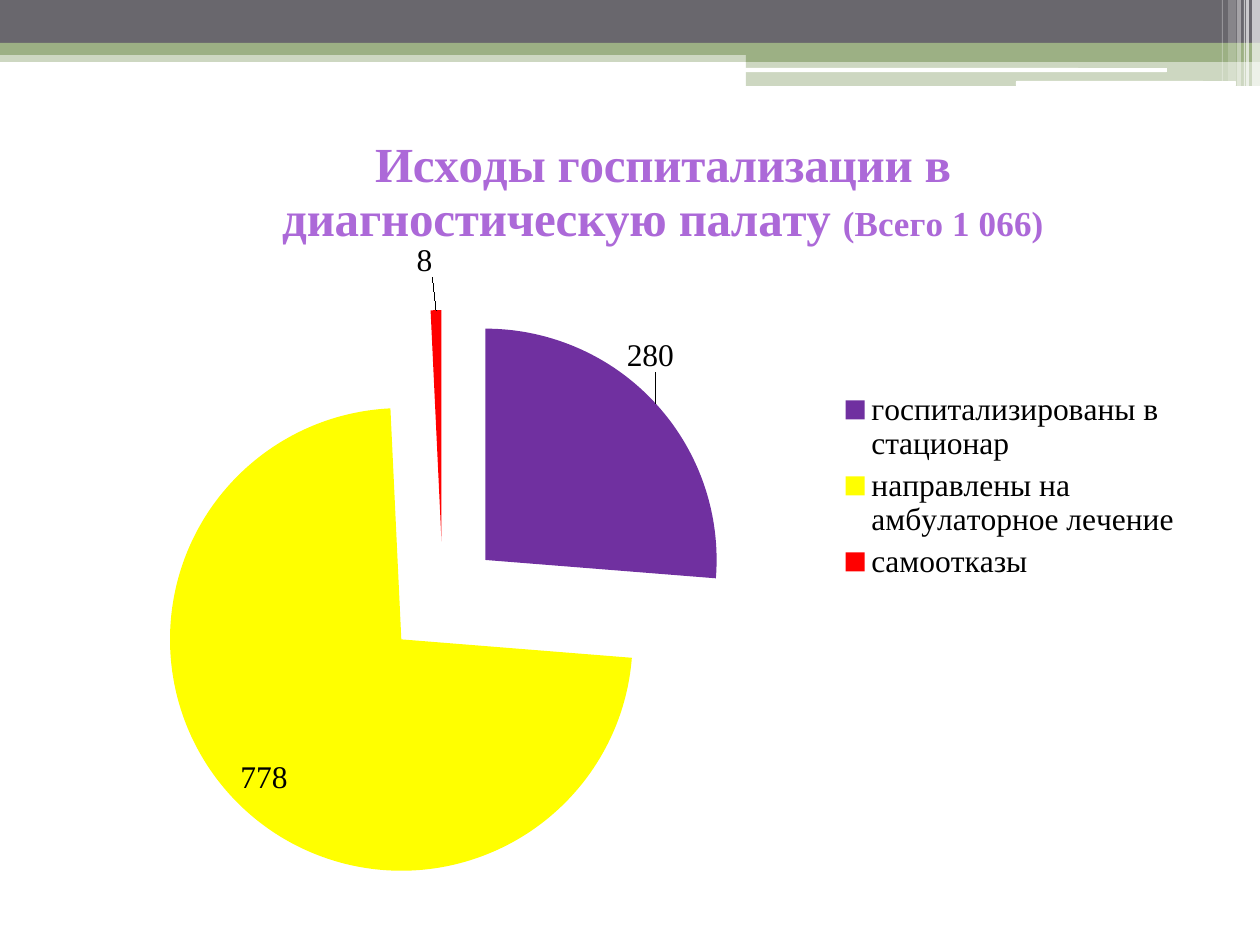
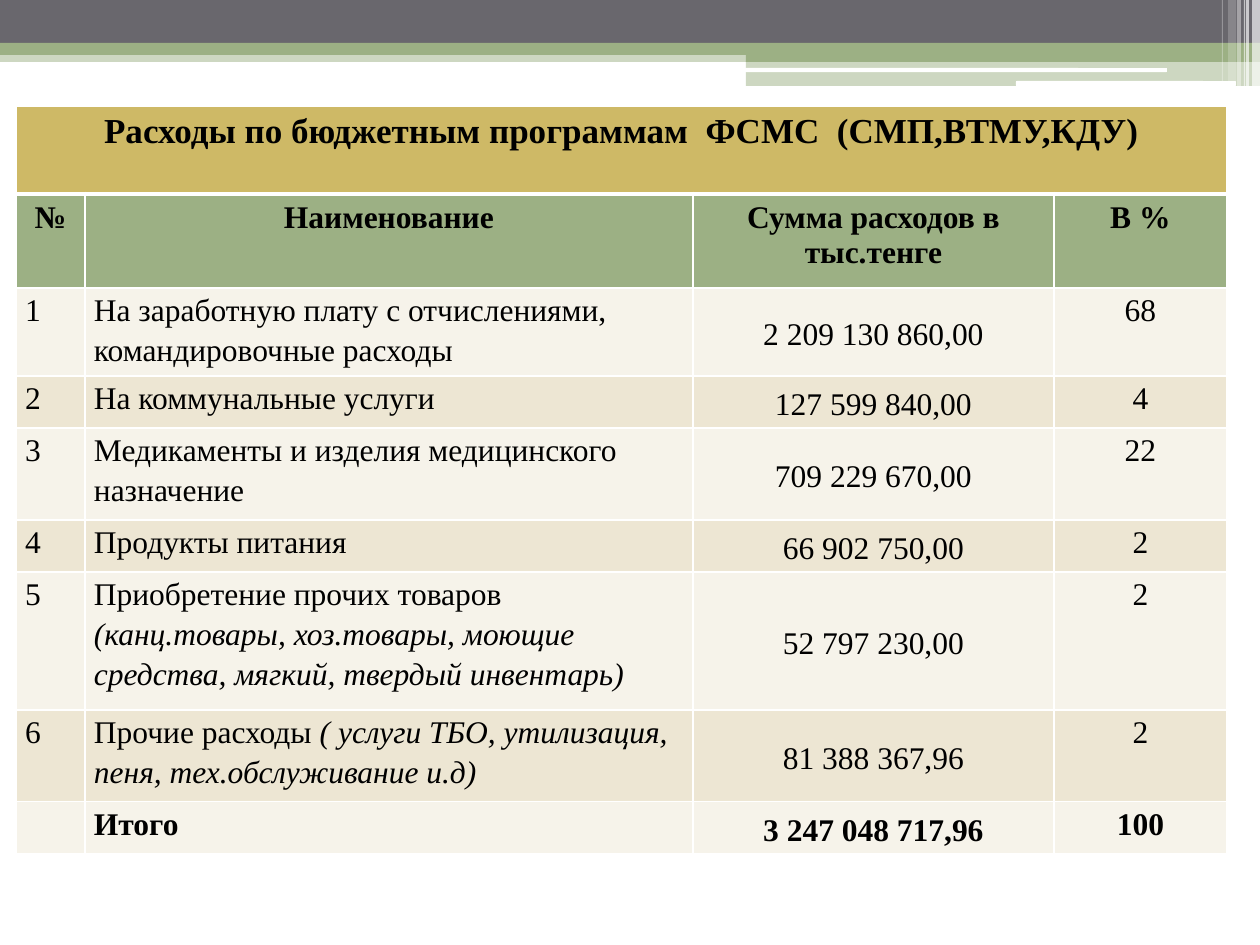
import pptx
import pptx.chart.data
import pptx.dml.color
import pptx.enum.chart
import pptx.enum.shapes
import pptx.enum.text
import pptx.oxml
import pptx.oxml.ns
import pptx.util

RGB = pptx.dml.color.RGBColor
Pt = pptx.util.Pt
SHAPE = pptx.enum.shapes.MSO_SHAPE
ALIGN = pptx.enum.text.PP_ALIGN
ANCHOR = pptx.enum.text.MSO_ANCHOR
LABEL = pptx.enum.chart.XL_LABEL_POSITION
qn = pptx.oxml.ns.qn

WHITE = RGB(0xFF, 0xFF, 0xFF)
BLACK = RGB(0, 0, 0)
GREY = RGB(0x69, 0x67, 0x6D)
GREEN = RGB(0x9C, 0xB0, 0x84)
GOLD = RGB(0xCE, 0xB9, 0x66)
CREAM = RGB(0xF6, 0xF3, 0xEA)
SAND = RGB(0xED, 0xE6, 0xD3)
LILAC = RGB(0xAC, 0x69, 0xD8)
PURPLE = RGB(0x70, 0x30, 0xA0)
YELLOW = RGB(0xFF, 0xFF, 0)
RED = RGB(0xFF, 0, 0)

FONT = "Times New Roman"
SCALE = 914400 / 126

# left, top, width, height, colour, opacity in percent
BANDS = [
    (0, 50, 1260, 12, GREEN, 50),
    (0, 0, 1260, 43, GREY, 100),
    (0, 43, 1260, 12, GREEN, 100),
    (746, 49, 514, 13, GREEN, 100),
    (746, 61, 514, 25, GREEN, 50),
]
WHITE_BARS = [(745, 68, 422, 4), (1016, 81, 220, 5)]
# left, width, height, opacity in percent
STRIPES = [(1252, 8, 86, 65), (1246, 3, 86, 65), (1244, 1, 86, 60),
           (1237, 4, 86, 40), (1228, 8, 81, 20), (1222, 1, 81, 30)]

OUTCOMES = [
    ("госпитализированы в стационар", 280, PURPLE),
    ("направлены на амбулаторное лечение", 778, YELLOW),
    ("самоотказы", 8, RED),
]

COLUMNS = [69, 608, 361, 173]
ROWS = [88, 94, 88, 52, 92, 52, 138, 92, 52]
BUDGET_TITLE = "Расходы по бюджетным программам  ФСМС  (СМП,ВТМУ,КДУ)"
BUDGET_HEADER = ["№", "Наименование", "Сумма расходов в тыс.тенге", "В %"]
# number, name, note in italics, amount, share
EXPENSES = [
    ("1", "На заработную плату с отчислениями, командировочные расходы", "",
     "2 209 130 860,00", "68"),
    ("2", "На коммунальные услуги", "", "127 599 840,00", "4"),
    ("3", "Медикаменты и изделия медицинского назначение", "",
     "709 229 670,00", "22"),
    ("4", "Продукты питания", "", "66 902 750,00", "2"),
    ("5", "Приобретение прочих товаров\n",
     "(канц.товары, хоз.товары, моющие средства, мягкий, твердый инвентарь)",
     "52 797 230,00", "2"),
    ("6", "Прочие расходы ",
     "( услуги ТБО, утилизация, пеня, тех.обслуживание и.д)",
     "81 388 367,96", "2"),
    ("", "Итого", "", "3 247 048 717,96", "100"),
]


def px(n):
    return round(n * SCALE)


def format_font(font, size=18, bold=False, italic=False, color=BLACK):
    font.name, font.size = FONT, Pt(size)
    font.bold, font.italic = bold, italic
    font.color.rgb = color


def write(p, text, align=None, spacing=None, **style):
    """Add text to a paragraph; a final newline becomes a line break."""
    if align is not None:
        p.alignment = align
    if spacing:
        p.line_spacing = spacing
    r = p.add_run()
    r.text = text.rstrip("\n")
    format_font(r.font, **style)
    if text.endswith("\n"):
        p.add_line_break()


def chart_layout(target=None, mode="edge", **fractions):
    """Build a manual c:layout from x, y, w and h as shares of the chart."""
    layout = pptx.oxml.parse_xml(
        '<c:layout xmlns:c="http://schemas.openxmlformats.org/drawingml/2006/chart">'
        "<c:manualLayout/></c:layout>")
    items = [("layoutTarget", target)] if target else []
    if mode == "edge":
        items += [("xMode", "edge"), ("yMode", "edge")]
    items += fractions.items()
    for tag, val in items:
        layout[0].append(layout.makeelement(qn("c:" + tag), {"val": str(val)}))
    return layout


def set_layout(parent, layout, after=None):
    """Replace the layout of a chart part, placing it after a child if given."""
    for old in parent.findall(qn("c:layout")):
        parent.remove(old)
    if after is None:
        parent.insert(0, layout)
    else:
        parent.find(qn(after)).addnext(layout)


class Deck:
    def __init__(self):
        self.prs = pptx.Presentation()
        self.prs.slide_width, self.prs.slide_height = px(1260), px(945)
        self.s = None

    def new_slide(self):
        self.s = self.prs.slides.add_slide(self.prs.slide_layouts[6])

    def box(self, x, y, w, h, color, opacity=100, kind=SHAPE.RECTANGLE):
        sp = self.s.shapes.add_shape(kind, px(x), px(y), px(w), px(h))
        sp.shadow.inherit = False
        sp.fill.solid()
        sp.fill.fore_color.rgb = color
        sp.line.fill.background()
        if opacity < 100:
            clr = sp.element.spPr.find(".//" + qn("a:srgbClr"))
            clr.append(clr.makeelement(qn("a:alpha"), {"val": str(opacity * 1000)}))
        return sp

    def master_bands(self):
        """Draw the top bands, then move them to the master for all slides."""
        shapes = [self.box(*band) for band in BANDS]
        shapes += [self.box(*bar, WHITE, kind=SHAPE.ROUNDED_RECTANGLE)
                   for bar in WHITE_BARS]
        shapes += [self.box(x, 0, w, h, WHITE, opacity)
                   for x, w, h, opacity in STRIPES]
        tree = self.prs.slide_master.shapes.element
        for i, sp in enumerate(shapes, start=100):
            sp.element.nvSpPr.cNvPr.set("id", str(i))
            tree.append(sp.element)

    def pie(self, x, y, w, h, entries, title_runs):
        data = pptx.chart.data.CategoryChartData()
        data.categories = [name for name, _, _ in entries]
        data.add_series("Series 1", [value for _, value, _ in entries])
        chart = self.s.shapes.add_chart(
            pptx.enum.chart.XL_CHART_TYPE.PIE,
            px(x), px(y), px(w), px(h), data).chart
        format_font(chart.font)

        chart.has_title = True
        p = chart.chart_title.text_frame.paragraphs[0]
        for text, size in title_runs:
            write(p, text, align=ALIGN.CENTER, size=size, bold=True, color=LILAC)
        title = chart.chart_title._element
        set_layout(title, chart_layout(x=0.19, y=0.08), after="c:tx")

        chart.has_legend = True
        legend = chart.legend
        legend.position = pptx.enum.chart.XL_LEGEND_POSITION.RIGHT
        legend.include_in_layout = False
        format_font(legend.font)
        set_layout(legend._element, chart_layout(x=0.68, y=0.38, w=0.31, h=0.24),
                   after="c:legendPos")

        plot_area = chart.plots[0]._element.getparent()
        set_layout(plot_area, chart_layout("inner", x=0.08, y=0.29, w=0.51, h=0.69))

        series = chart.plots[0].series[0]
        for i, (_, _, color) in enumerate(entries):
            fill = series.points[i].format.fill
            fill.solid()
            fill.fore_color.rgb = color
        ser = series._element
        ser.find(qn("c:dPt")).addprevious(
            ser.makeelement(qn("c:explosion"), {"val": "25"}))

        labels = series.data_labels
        labels.show_value = True
        labels.position = LABEL.INSIDE_END
        format_font(labels.font)
        return series

    def move_label(self, series, index, dx, dy):
        """Put one label outside its slice, shifted by shares of the chart."""
        label = series.points[index].data_label
        format_font(label.font)
        label.position = LABEL.OUTSIDE_END
        for d_lbl in series._element.iter(qn("c:dLbl")):
            if d_lbl.find(qn("c:idx")).get("val") == str(index):
                set_layout(d_lbl, chart_layout(mode="factor", x=dx, y=dy),
                           after="c:idx")

    def table(self, x, y, columns, rows):
        frame = self.s.shapes.add_table(len(rows), len(columns), px(x), px(y),
                                        px(sum(columns)), px(sum(rows)))
        table = frame.table
        table.first_row = table.horz_banding = False
        for col, width in zip(table.columns, columns):
            col.width = px(width)
        for row, height in zip(table.rows, rows):
            row.height = px(height)
        return table

    def cell(self, cell, runs, fill, bottom=1, top=1, anchor=ANCHOR.TOP,
             margins=None, **style):
        """Fill, border and write a cell; runs are (text, italic) pairs."""
        tc_pr = cell._tc.get_or_add_tcPr()
        widths = {"lnL": 1, "lnR": 1, "lnT": top, "lnB": bottom}
        for i, (tag, width) in enumerate(widths.items()):
            tc_pr.insert(i, pptx.oxml.parse_xml(
                f'<a:{tag} xmlns:a="http://schemas.openxmlformats.org/drawingml/2006/main"'
                f' w="{Pt(width)}"><a:solidFill><a:srgbClr val="{WHITE}"/>'
                f"</a:solidFill></a:{tag}>"))
        cell.fill.solid()
        cell.fill.fore_color.rgb = fill
        cell.vertical_anchor = anchor
        if margins:
            cell.margin_left, cell.margin_top = px(margins[0]), px(margins[1])
            cell.margin_right, cell.margin_bottom = px(margins[0]), px(margins[1])
        for text, italic in runs:
            if text:
                write(cell.text_frame.paragraphs[0], text, italic=italic, **style)


def outcomes_slide(deck):
    series = deck.pie(63, 66, 1134, 840, OUTCOMES, [
        ("Исходы госпитализации в диагностическую палату ", 28),
        ("(Всего 1 066)", 20)])
    deck.move_label(series, 0, -0.03, -0.03)
    deck.move_label(series, 2, -0.01, -0.03)


def budget_slide(deck):
    table = deck.table(16, 106, COLUMNS, ROWS)
    table.cell(0, 0).merge(table.cell(0, 3))
    for c, heading in enumerate(BUDGET_HEADER):
        title = BUDGET_TITLE if c == 0 else ""
        deck.cell(table.cell(0, c), [(title, False)], GOLD, bottom=3,
                  align=ALIGN.CENTER, size=20, bold=True)
        deck.cell(table.cell(1, c), [(heading, False)], GREEN, top=3,
                  align=ALIGN.CENTER, bold=True)
    for i, (number, name, note, amount, share) in enumerate(EXPENSES):
        texts = [[(number, False)], [(name, False), (note, True)],
                 [(amount, False)], [(share, False)]]
        for c, runs in enumerate(texts):
            deck.cell(table.cell(i + 2, c), runs, SAND if i % 2 else CREAM,
                      anchor=ANCHOR.MIDDLE if c == 2 else ANCHOR.TOP,
                      margins=(9, 0), spacing=1.15,
                      align=ALIGN.CENTER if c >= 2 else ALIGN.LEFT,
                      bold=name == "Итого")


def main():
    deck = Deck()
    deck.new_slide()
    deck.master_bands()
    outcomes_slide(deck)
    deck.new_slide()
    budget_slide(deck)
    deck.prs.save("out.pptx")


if __name__ == "__main__":
    main()
